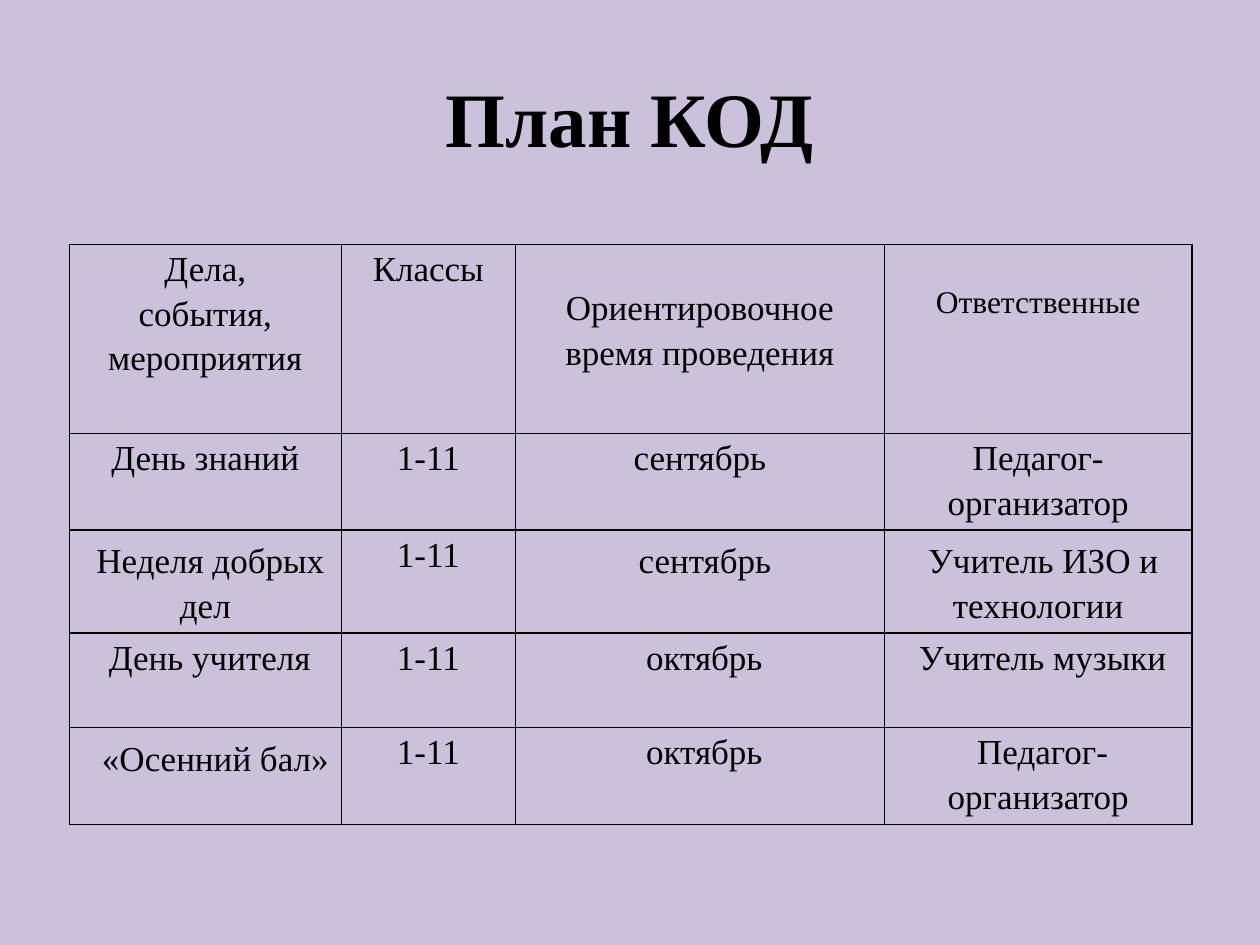
from pptx import Presentation
from pptx.dml.color import RGBColor
from pptx.enum.text import MSO_ANCHOR, PP_ALIGN
from pptx.oxml.xmlchemy import OxmlElement
from pptx.util import Inches, Pt

COLORS = {"background": "CCC1DA", "ink": "000000"}
FONT = "Times New Roman"
TITLE = "План КОД"

COLUMN_WIDTHS = [2.16, 1.38, 2.93, 2.44]
ROW_HEIGHTS = [1.5, 0.75, 0.78, 0.75, 0.75]

LOWERED = {"top": 0.05, "indent": 0.08}
INDENTED = {"indent": 0.07}
ROWS = [
    [("Дела,\nсобытия, мероприятия", {}), ("Классы", {}),
     ("Ориентировочное\nвремя проведения", {"top": 0.31}),
     ("Ответственные", {"top": 0.28, "size": 18})],
    [("День знаний", {}), ("1-11", {}), ("сентябрь", {}),
     ("Педагог-организатор", {})],
    [("Неделя добрых дел", LOWERED), ("1-11", {}), ("сентябрь", LOWERED),
     ("Учитель ИЗО и технологии", LOWERED)],
    [("День учителя", INDENTED), ("1-11", {}), ("октябрь", INDENTED),
     ("Учитель музыки", INDENTED)],
    [("«Осенний бал»", {"top": 0.05, "indent": 0.16}), ("1-11", {}),
     ("октябрь", INDENTED), ("Педагог-организатор", INDENTED)],
]


def write(frame, text, size=20, bold=False, spacing=1.15, indent=0):
    frame.word_wrap = True
    for index, line in enumerate(text.split("\n")):
        para = frame.add_paragraph() if index else frame.paragraphs[0]
        para.alignment = PP_ALIGN.CENTER
        para.line_spacing = spacing
        if indent:
            para._p.get_or_add_pPr().set("indent", str(Inches(indent)))
        span = para.add_run()
        span.text = line
        span.font.name = FONT
        span.font.size = Pt(size)
        span.font.bold = bold
        span.font.color.rgb = RGBColor.from_string(COLORS["ink"])


def add_borders(cell):
    properties = cell._tc.get_or_add_tcPr()
    for position, side in enumerate(("lnL", "lnR", "lnT", "lnB")):
        line = OxmlElement(f"a:{side}")
        line.set("w", str(Pt(1)))
        fill = OxmlElement("a:solidFill")
        color = OxmlElement("a:srgbClr")
        color.set("val", COLORS["ink"])
        fill.append(color)
        line.append(fill)
        properties.insert(position, line)


def fill_cell(cell, text, top=0, **text_format):
    cell.margin_left = cell.margin_right = Inches(0.07)
    cell.margin_top = Inches(top)
    cell.margin_bottom = 0
    cell.fill.background()
    write(cell.text_frame, text, **text_format)
    add_borders(cell)


def main():
    deck = Presentation()
    deck.slide_width, deck.slide_height = Inches(10), Inches(7.5)
    page = deck.slides.add_slide(deck.slide_layouts[6])
    page.background.fill.solid()
    page.background.fill.fore_color.rgb = RGBColor.from_string(COLORS["background"])

    title = page.shapes.add_textbox(Inches(0.5), Inches(0.3), Inches(9), Inches(1.25))
    title.text_frame.vertical_anchor = MSO_ANCHOR.MIDDLE
    write(title.text_frame, TITLE, size=44, bold=True, spacing=1)

    plan = page.shapes.add_table(
        len(ROWS), len(COLUMN_WIDTHS), Inches(0.55), Inches(1.94),
        Inches(sum(COLUMN_WIDTHS)), Inches(sum(ROW_HEIGHTS))).table
    plan.first_row = plan.horz_banding = False
    for column, width in zip(plan.columns, COLUMN_WIDTHS):
        column.width = Inches(width)
    for row, height, contents in zip(plan.rows, ROW_HEIGHTS, ROWS):
        row.height = Inches(height)
        for cell, (text, options) in zip(row.cells, contents):
            fill_cell(cell, text, **options)

    deck.save("out.pptx")


if __name__ == "__main__":
    main()
